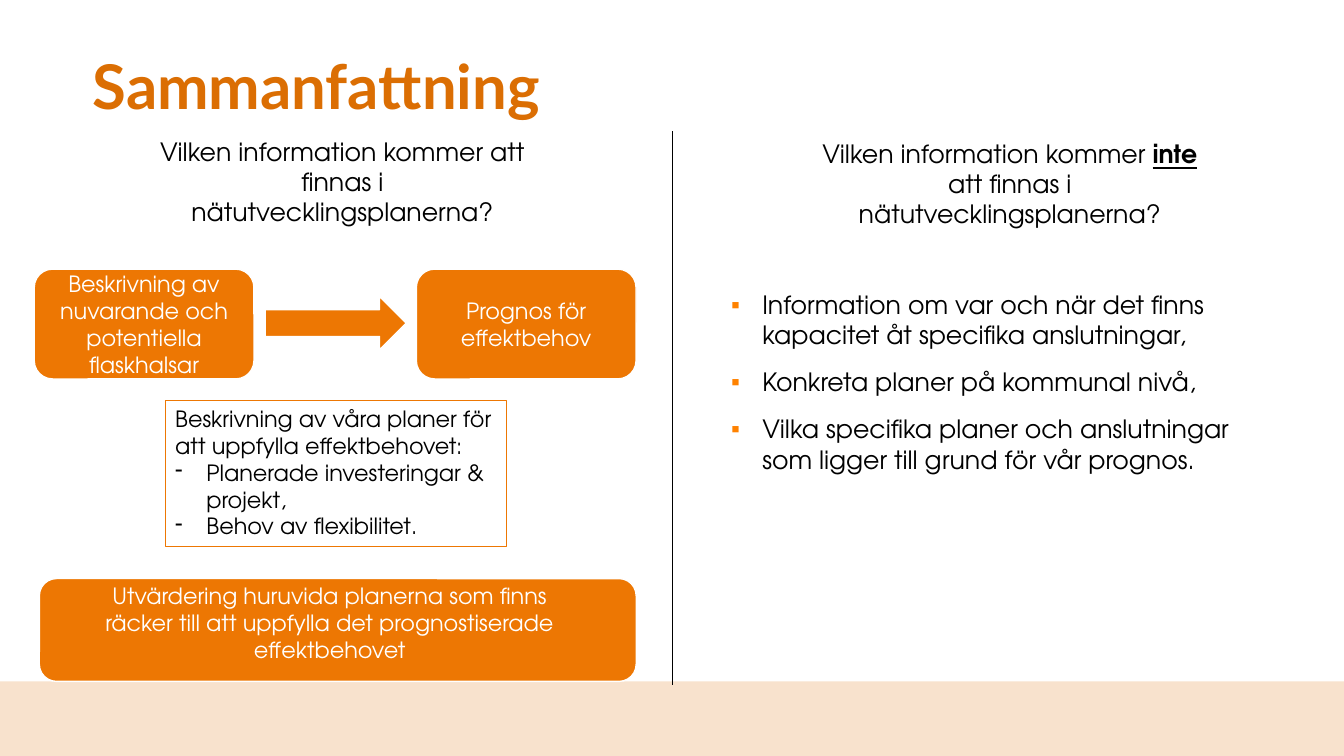
from dataclasses import dataclass

from lxml import etree
from pptx import Presentation
from pptx.dml.color import RGBColor
from pptx.enum.shapes import MSO_CONNECTOR, MSO_SHAPE
from pptx.enum.text import MSO_ANCHOR, MSO_AUTO_SIZE, PP_ALIGN
from pptx.oxml.ns import qn
from pptx.util import Emu, Inches, Pt

RECT = MSO_SHAPE.RECTANGLE
ROUNDED = MSO_SHAPE.ROUNDED_RECTANGLE
ARROW = MSO_SHAPE.RIGHT_ARROW
STRAIGHT = MSO_CONNECTOR.STRAIGHT
TOP, MIDDLE, BOTTOM = MSO_ANCHOR.TOP, MSO_ANCHOR.MIDDLE, MSO_ANCHOR.BOTTOM
LEFT, CENTER = PP_ALIGN.LEFT, PP_ALIGN.CENTER
NO_AUTOFIT = MSO_AUTO_SIZE.NONE

WIDTH, HEIGHT = Inches(13.33), Inches(7.5)


@dataclass(frozen=True)
class Theme:
    title_font: str = "Lato"
    body_font: str = "TeX Gyre Adventor"
    title: str = "DB6E03"
    accent: str = "ED7703"
    bullet: str = "FF8200"
    band: str = "F8E2CD"
    ink: str = "000000"
    paper: str = "FFFFFF"
    title_size: int = 44
    large: int = 18
    small: int = 16


THEME = Theme()


@dataclass(frozen=True)
class Area:
    """Percent shares of the slide's width and height."""
    x: float
    y: float
    w: float
    h: float

    def emu(self) -> tuple[Emu, Emu, Emu, Emu]:
        return across(self.x), down(self.y), across(self.w), down(self.h)


@dataclass(frozen=True)
class Run:
    text: str
    strong: bool = False


@dataclass(frozen=True)
class Para:
    runs: tuple[Run, ...]
    bullet: str = ""
    bullet_color: str = THEME.ink


@dataclass(frozen=True)
class Style:
    size: int
    color: str = THEME.ink
    align: PP_ALIGN = LEFT
    anchor: MSO_ANCHOR = TOP
    after: int = 0


@dataclass(frozen=True)
class Block:
    kind: MSO_SHAPE
    area: Area
    fill: str = ""
    line: str = ""
    weight: float = 1
    paras: tuple[Para, ...] = ()
    style: Style = Style(THEME.small, THEME.paper, CENTER, MIDDLE)


@dataclass(frozen=True)
class Label:
    area: Area
    paras: tuple[Para, ...]
    style: Style


def across(share: float) -> Emu:
    return Emu(round(WIDTH * share / 100))


def down(share: float) -> Emu:
    return Emu(round(HEIGHT * share / 100))


def rgb(color: str) -> RGBColor:
    return RGBColor.from_string(color)


def plain(text: str) -> Para:
    return Para((Run(text),))


def dash(text: str) -> Para:
    return Para((Run(text),), "-")


def square(text: str) -> Para:
    return Para((Run(text),), "▪", THEME.bullet)


def place(sp, area: Area) -> None:
    sp.left, sp.top, sp.width, sp.height = area.emu()


def add_bullet(p, char: str, color: str) -> None:
    pPr = p._p.get_or_add_pPr()
    pPr.set("marL", str(Inches(0.31)))
    pPr.set("indent", str(-Inches(0.31)))
    clr = etree.SubElement(pPr, qn("a:buClr"))
    etree.SubElement(clr, qn("a:srgbClr"), val=color)
    etree.SubElement(pPr, qn("a:buChar"), char=char)


def write(tf, paras: tuple[Para, ...], style: Style) -> None:
    tf.word_wrap = True
    tf.auto_size = NO_AUTOFIT
    tf.vertical_anchor = style.anchor
    for i, para in enumerate(paras):
        p = tf.add_paragraph() if i else tf.paragraphs[0]
        if para.bullet:
            add_bullet(p, para.bullet, para.bullet_color)
        p.alignment = style.align
        p.space_before = Pt(0)
        p.space_after = Pt(style.after)
        for run in para.runs:
            r = p.add_run()
            r.text = run.text
            r.font.name = THEME.body_font
            r.font.size = Pt(style.size)
            r.font.color.rgb = rgb(style.color)
            if run.strong:
                r.font.bold = r.font.underline = True


def draw_block(s, block: Block) -> None:
    sp = s.shapes.add_shape(block.kind, *block.area.emu())
    sp.shadow.inherit = False
    if block.fill:
        sp.fill.solid()
        sp.fill.fore_color.rgb = rgb(block.fill)
    else:
        sp.fill.background()
    if block.line:
        sp.line.color.rgb = rgb(block.line)
        sp.line.width = Pt(block.weight)
    else:
        sp.line.fill.background()
    if block.paras:
        write(sp.text_frame, block.paras, block.style)


def draw_label(s, label: Label) -> None:
    sp = s.shapes.add_textbox(*label.area.emu())
    write(sp.text_frame, label.paras, label.style)


def draw_title(s, text: str) -> None:
    sp = s.shapes.title
    place(sp, Area(6.9, 5.33, 86.27, 12))
    tf = sp.text_frame
    tf.auto_size = NO_AUTOFIT
    tf.vertical_anchor = BOTTOM
    tf.margin_left = tf.margin_top = tf.margin_right = 0
    tf.margin_bottom = Inches(0.08)
    p = tf.paragraphs[0]
    p.alignment = LEFT
    p.line_spacing = 0.9
    r = p.add_run()
    r.text = text
    r.font.name = THEME.title_font
    r.font.size = Pt(THEME.title_size)
    r.font.bold = True
    r.font.color.rgb = rgb(THEME.title)


def draw_divider(s) -> None:
    line = s.shapes.add_connector(STRAIGHT, across(50), down(17.33), across(50), down(90.67))
    line.line.color.rgb = rgb(THEME.ink)
    line.line.width = Pt(0.5)
    etree.SubElement(line._element.spPr, qn("a:effectLst"))


HEADING = Style(THEME.large, align=CENTER)
BLOCKS = (
    Block(RECT, Area(0, 90.13, 100, 9.87), THEME.band),
    Block(ROUNDED, Area(2.55, 35.6, 16.35, 14.53), THEME.accent, THEME.paper,
          paras=(plain("Beskrivning av nuvarande och potentiella flaskhalsar"),)),
    Block(ARROW, Area(19.73, 39.2, 10.5, 7.07), THEME.accent, THEME.paper),
    Block(ROUNDED, Area(30.98, 35.6, 16.35, 14.53), THEME.accent, THEME.paper,
          paras=(plain("Prognos för effektbehov"),)),
    Block(RECT, Area(12.3, 52.93, 25.36, 19.33), line=THEME.accent, weight=0.75,
          paras=(plain("Beskrivning av våra planer för att uppfylla effektbehovet:"),
                 dash("Planerade investeringar & projekt,"),
                 dash("Behov av flexibilitet.")),
          style=Style(THEME.small)),
    Block(ROUNDED, Area(2.93, 76.53, 44.41, 13.6), THEME.accent, THEME.paper),
)
LABELS = (
    Label(Area(10.73, 17.33, 29.48, 13.47),
          (plain("Vilken information kommer att finnas i nätutvecklingsplanerna?"),), HEADING),
    Label(Area(60.39, 17.6, 29.48, 13.47),
          (Para((Run("Vilken information kommer "), Run("inte", True),
                 Run(" att finnas i nätutvecklingsplanerna?"))),), HEADING),
    Label(Area(6.53, 76.4, 36.01, 15.73),
          (plain("Utvärdering huruvida planerna som finns räcker till att uppfylla "
                 "det prognostiserade effektbehovet"),),
          Style(THEME.small, THEME.paper, CENTER)),
)
MISSING = (
    square("Information om var och när det finns kapacitet åt specifika anslutningar,"),
    square("Konkreta planer på kommunal nivå,"),
    square("Vilka specifika planer och anslutningar som ligger till grund för vår prognos."),
)


def main() -> None:
    prs = Presentation()
    prs.slide_width, prs.slide_height = WIDTH, HEIGHT
    s = prs.slides.add_slide(prs.slide_layouts[1])
    draw_title(s, "Sammanfattning")
    body = s.placeholders[1]
    place(body, Area(53.64, 37.6, 42.54, 26))
    write(body.text_frame, MISSING, Style(THEME.large, after=12))
    for block in BLOCKS:
        draw_block(s, block)
    for label in LABELS:
        draw_label(s, label)
    draw_divider(s)
    prs.save("out.pptx")


if __name__ == "__main__":
    main()
